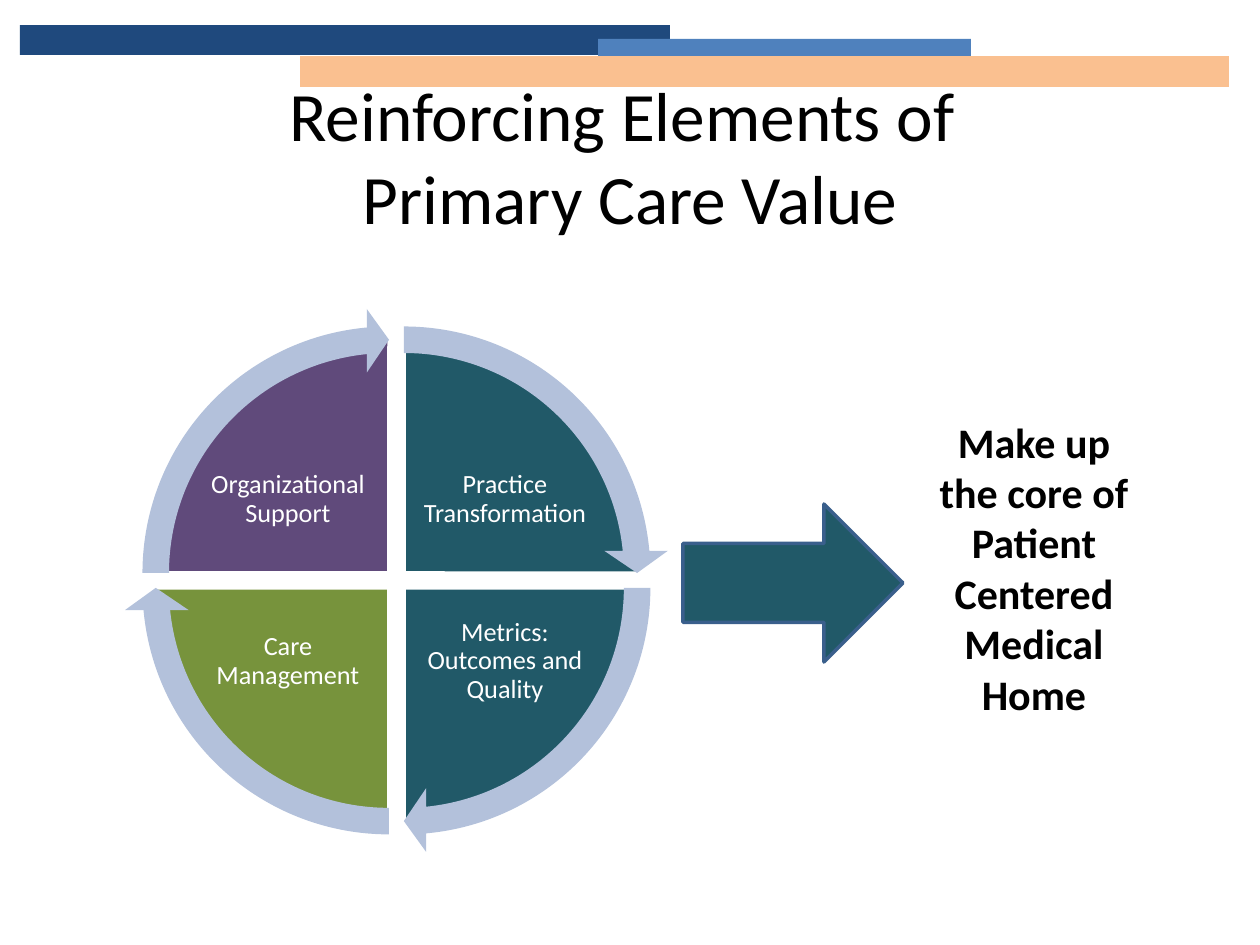
"""Build the slide on the reinforcing elements of primary care value."""
from dataclasses import dataclass
from typing import Any, NamedTuple

from pptx import Presentation
from pptx.dml.color import RGBColor
from pptx.enum.shapes import MSO_SHAPE
from pptx.enum.text import MSO_ANCHOR, MSO_AUTO_SIZE, PP_ALIGN
from pptx.util import Emu, Pt

RECT, PIE = MSO_SHAPE.RECTANGLE, MSO_SHAPE.PIE
RING, ARROW = MSO_SHAPE.CIRCULAR_ARROW, MSO_SHAPE.RIGHT_ARROW
MIDDLE, TOP = MSO_ANCHOR.MIDDLE, MSO_ANCHOR.TOP
FIXED, CENTER = MSO_AUTO_SIZE.NONE, PP_ALIGN.CENTER
SCALE = 914400 / 126
TURN = 216


@dataclass(frozen=True)
class Theme:
    """Colours, font and type sizes of the slide."""

    font: str = "Calibri"
    navy: str = "1F497D"
    blue: str = "4F81BD"
    peach: str = "FAC090"
    teal: str = "215968"
    green: str = "77933C"
    plum: str = "604A7B"
    mist: str = "B3C1DB"
    edge: str = "3A5F8C"
    white: str = "FFFFFF"
    black: str = "000000"
    title: float = 39.6
    body: int = 24
    label: int = 15
    line: int = 2


class Box(NamedTuple):
    """A place and size in px."""

    left: int
    top: int
    width: int
    height: int


class Bar(NamedTuple):
    """A band of the header."""

    box: Box
    fill: str


class Part(NamedTuple):
    """A quarter of the cycle, by its side of the centre."""

    text: str
    fill: str
    right: bool
    low: bool
    start: int


LOOK = Theme()
BARS = [
    Bar(Box(300, 56, 929, 31), LOOK.peach),
    Bar(Box(20, 25, 650, 30), LOOK.navy),
    Bar(Box(598, 39, 373, 17), LOOK.blue),
]
PARTS = [
    Part("Practice Transformation", LOOK.teal, True, False, 162),
    Part("Metrics: Outcomes and Quality", LOOK.teal, True, True, 0),
    Part("Care Management", LOOK.green, False, True, 54),
    Part("Organizational Support", LOOK.plum, False, False, 108),
]


def px(size: int) -> Emu:
    """Turn px into EMU."""
    return Emu(round(size * SCALE))


def apply(item: Any, form: dict[str, Any]) -> None:
    """Set each format value on an item."""
    for name, value in form.items():
        setattr(item, name, value)


def place(box: Box) -> list[Emu]:
    """Turn a box into EMU lengths."""
    return [px(size) for size in box]


def draw(slide: Any, kind: Any, box: Box, fill: str, line: str = "",
         turns: tuple[float, ...] = ()) -> None:
    """Draw a filled preset shape."""
    shape = slide.shapes.add_shape(kind, *place(box))
    shape.shadow.inherit = False
    shape.fill.solid()
    shape.fill.fore_color.rgb = RGBColor.from_string(fill)
    if line:
        shape.line.color.rgb = RGBColor.from_string(line)
        shape.line.width = Pt(LOOK.line)
    else:
        shape.line.fill.background()
    for index, value in enumerate(turns):
        shape.adjustments[index] = value


def write(shape: Any, text: str, size: float, color: str, frame: dict[str, Any],
          space: float = 1.0, bold: bool = False) -> None:
    """Put centred text in a shape."""
    body = shape.text_frame
    apply(body, {"word_wrap": True, "auto_size": FIXED, **frame})
    body.text = text
    para = body.paragraphs[0]
    apply(para, {"alignment": CENTER, "line_spacing": space})
    for run in para.runs:
        apply(run.font, {"name": LOOK.font, "size": Pt(size), "bold": bold})
        run.font.color.rgb = RGBColor.from_string(color)


def center(part: Part) -> tuple[int, int]:
    """Find the centre that a quarter turns about."""
    return (404 if part.right else 389), (588 if part.low else 573)


def wedge(slide: Any, part: Part) -> None:
    """Draw a quarter pie and its label."""
    x, y = center(part)
    draw(slide, PIE, Box(x - 235, y - 235, 470, 470), part.fill, LOOK.white,
         (part.start, (part.start + 54) % TURN))
    box = Box(x + 14 if part.right else x - 188,
              y + 9 if part.low else y - 138, 174, 129)
    label = slide.shapes.add_textbox(*place(box))
    sides = ("left", "right", "top", "bottom")
    frame = {f"margin_{side}": px(3) for side in sides}
    write(label, part.text, LOOK.label, LOOK.white,
          {"vertical_anchor": MIDDLE, **frame}, 0.9)


def ring(slide: Any, part: Part) -> None:
    """Draw the curved arrow around a quarter."""
    x, y = center(part)
    draw(slide, RING, Box(x - 265, y - 265, 530, 530), LOOK.mist,
         turns=(0.05, 3.28, part.start + 50.73, part.start, 0.06))


def main() -> None:
    """Build and save the slide."""
    deck = Presentation()
    apply(deck, {"slide_width": px(1260), "slide_height": px(945)})
    slide = deck.slides.add_slide(deck.slide_layouts[5])
    for bar in BARS:
        draw(slide, RECT, bar.box, bar.fill)
    title = slide.shapes.title
    apply(title, dict(zip(Box._fields, place(Box(63, 76, 1134, 158)))))
    write(title, "Reinforcing Elements of \vPrimary Care Value",
          LOOK.title, LOOK.black, {"vertical_anchor": MIDDLE})
    for part in PARTS:
        wedge(slide, part)
    for part in PARTS:
        ring(slide, part)
    draw(slide, ARROW, Box(683, 504, 220, 158), LOOK.teal, LOOK.edge)
    note = slide.shapes.add_textbox(*place(Box(913, 410, 242, 318)))
    write(note, "Make up the core of Patient Centered Medical Home",
          LOOK.body, LOOK.black, {"vertical_anchor": TOP}, bold=True)
    deck.save("out.pptx")


if __name__ == "__main__":
    main()
